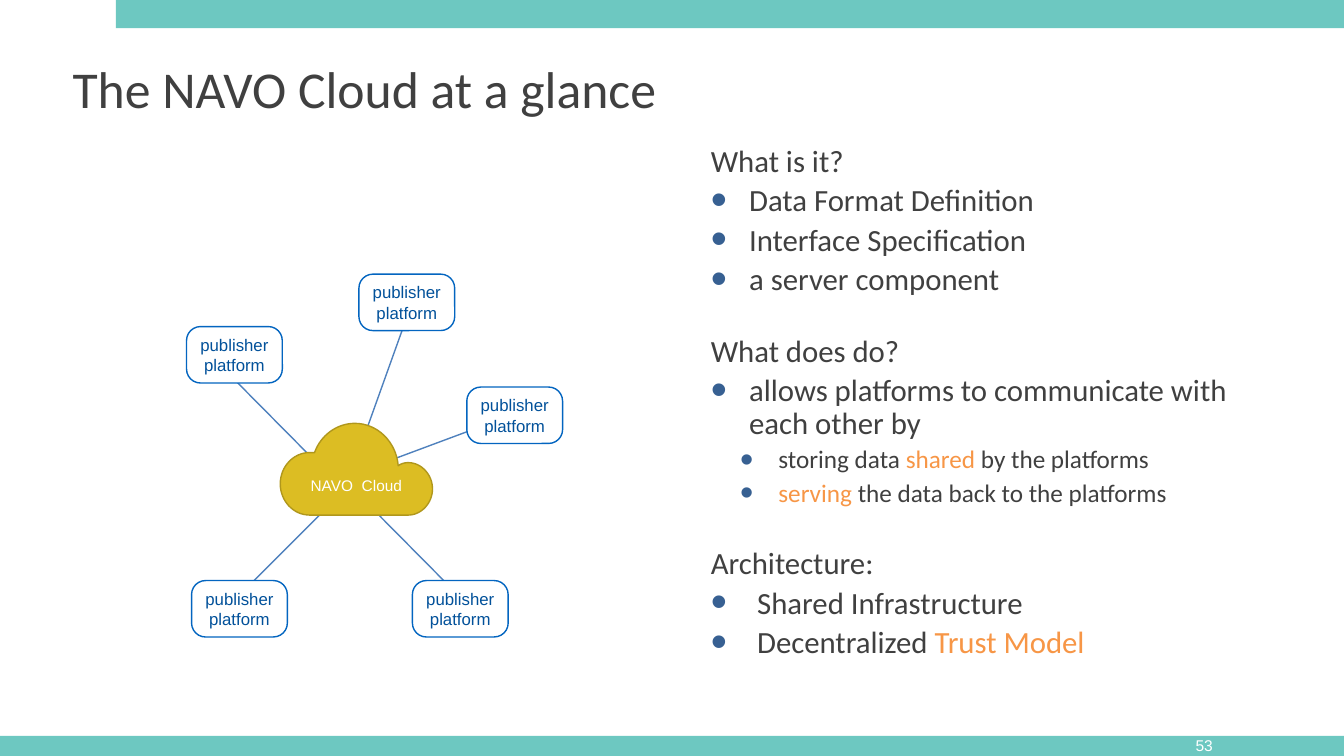
from lxml import etree
from pptx import Presentation
from pptx.dml.color import RGBColor
from pptx.enum.shapes import MSO_CONNECTOR, MSO_SHAPE
from pptx.enum.text import MSO_ANCHOR, PP_ALIGN
from pptx.oxml.ns import qn
from pptx.util import Inches, Pt

RECTANGLE = MSO_SHAPE.RECTANGLE
ROUNDED = MSO_SHAPE.ROUNDED_RECTANGLE
STRAIGHT = MSO_CONNECTOR.STRAIGHT
TOP, MIDDLE = MSO_ANCHOR.TOP, MSO_ANCHOR.MIDDLE
LEFT, CENTER, RIGHT = PP_ALIGN.LEFT, PP_ALIGN.CENTER, PP_ALIGN.RIGHT

TEAL = RGBColor(0x6D, 0xC8, 0xC1)
WHITE = RGBColor(0xFF, 0xFF, 0xFF)
DARK_GRAY = RGBColor(0x40, 0x40, 0x40)
ORANGE = RGBColor(0xF7, 0x96, 0x46)
BULLET_BLUE = RGBColor(0x37, 0x60, 0x92)
BOX_LINE = RGBColor(0x03, 0x65, 0xC0)
BOX_TEXT = RGBColor(0x02, 0x51, 0x9A)
SPOKE_BLUE = RGBColor(0x4F, 0x81, 0xBD)
GOLD = RGBColor(0xDC, 0xBD, 0x23)
DARK_GOLD = RGBColor(0xB0, 0x97, 0x1C)

SLIDE_WIDTH, SLIDE_HEIGHT = 13.33, 7.5
PLATFORM_SIZE = (0.95, 0.56)

# Positions within the diagram: platform corner, spoke start, spoke end
PLATFORMS = [
    ((1.71, 0), (1.69, 1.81), (2.17, 0.47)),
    ((2.78, 1.12), (1.61, 2.0), (2.79, 1.56)),
    ((0, 0.52), (1.42, 2.0), (0.47, 1.04)),
    ((0.05, 3.04), (1.61, 2.1), (0.66, 3.05)),
    ((2.24, 3.04), (1.68, 2.16), (2.72, 3.21)),
]

# Cloud outline within its box: a point, or two control points and an end
CLOUD_START = (0.74, 0)
CLOUD_OUTLINE = [
    [(0.56, 0), (0.4, 0.12), (0.34, 0.29)],
    [(0.32, 0.29), (0.31, 0.29), (0.29, 0.29)],
    [(0.13, 0.29), (0, 0.43), (0, 0.6)],
    [(0, 0.77), (0.13, 0.91), (0.29, 0.91)],
    [(1.27, 0.91)],
    [(1.4, 0.91), (1.51, 0.79), (1.51, 0.65)],
    [(1.51, 0.51), (1.4, 0.39), (1.27, 0.39)],
    [(1.23, 0.39), (1.2, 0.4), (1.17, 0.42)],
    [(1.15, 0.18), (0.96, 0), (0.74, 0)],
]

# Text parts, size, hanging indent, left margin, space before
FACTS = [
    (["What is it?"], 22, 0, 0, 0),
    (["Data Format Definition"], 22, 0.38, 0.38, 5),
    (["Interface Specification"], 22, 0.38, 0.38, 5),
    (["a server component"], 22, 0.38, 0.38, 5),
    (["What does do?"], 22, 0, 0, 28),
    (["allows platforms to communicate with each other by"], 22, 0.38, 0.38, 5),
    (["storing data ", "shared", " by the platforms"], 18, 0.38, 0.67, 5),
    (["serving", " the data back to the platforms"], 18, 0.38, 0.67, 5),
    (["Architecture:"], 22, 0, 0, 29),
    (["Shared Infrastructure"], 22, 0.46, 0.46, 5),
    (["Decentralized ", "Trust Model"], 22, 0.46, 0.46, 5),
]
HIGHLIGHTS = {"shared", "serving", "Trust Model"}


def style_font(font, name, size, color):
    font.name = name
    font.size = Pt(size)
    font.color.rgb = color


def set_frame(shape, inset, anchor, wrap=True):
    frame = shape.text_frame
    frame.word_wrap = wrap
    frame.vertical_anchor = anchor
    frame.margin_left = frame.margin_right = Inches(inset)
    frame.margin_top = frame.margin_bottom = Inches(inset)
    return frame


def write_line(frame, text, name, size, color, alignment):
    frame.text = text
    paragraph = frame.paragraphs[0]
    paragraph.alignment = alignment
    style_font(paragraph.runs[0].font, name, size, color)


def paint(shape, fill, line=None):
    shape.shadow.inherit = False
    shape.fill.solid()
    shape.fill.fore_color.rgb = fill
    if line is None:
        shape.line.fill.background()
    else:
        shape.line.color.rgb = line
        shape.line.width = Pt(1)


def add_box(slide, preset, left, top, width, height, fill, line=None):
    shape = slide.shapes.add_shape(
        preset, Inches(left), Inches(top), Inches(width), Inches(height))
    paint(shape, fill, line)
    return shape


def add_text_box(slide, left, top, width, height):
    return slide.shapes.add_textbox(
        Inches(left), Inches(top), Inches(width), Inches(height))


def add_bars(slide):
    add_box(slide, RECTANGLE, 0, 7.3, SLIDE_WIDTH, 0.2, TEAL)
    add_box(slide, RECTANGLE, 1.15, 0, SLIDE_WIDTH - 1.15, 0.28, TEAL)


def add_title(slide, left, top, width, height):
    frame = set_frame(add_text_box(slide, left, top, width, height), 0.05, TOP)
    write_line(frame, "The NAVO Cloud at a glance", "Calibri", 36.9, DARK_GRAY, LEFT)


def add_page_number(slide, left, top, width, height):
    box = add_text_box(slide, left, top, width, height)
    frame = set_frame(box, 0.05, MIDDLE, wrap=False)
    write_line(frame, "53", "Arial", 11.1, WHITE, RIGHT)


def add_bullet(paragraph, hanging, margin):
    properties = paragraph._p.get_or_add_pPr()
    properties.set("marL", str(Inches(margin)))
    properties.set("indent", str(-Inches(hanging)))
    color = etree.SubElement(properties, qn("a:buClr"))
    etree.SubElement(color, qn("a:srgbClr"), val=str(BULLET_BLUE))
    etree.SubElement(properties, qn("a:buSzPct"), val="150000")
    etree.SubElement(properties, qn("a:buFont"), typeface="Arial")
    etree.SubElement(properties, qn("a:buChar"), char="•")


def add_facts(slide, left, top, width, height):
    frame = set_frame(add_text_box(slide, left, top, width, height), 0.05, TOP)
    for index, (parts, size, hanging, margin, space) in enumerate(FACTS):
        paragraph = frame.add_paragraph() if index else frame.paragraphs[0]
        if hanging:
            add_bullet(paragraph, hanging, margin)
        paragraph.line_spacing = 0.88
        paragraph.space_before = Pt(space)
        for part in parts:
            run = paragraph.add_run()
            run.text = part
            color = ORANGE if part in HIGHLIGHTS else DARK_GRAY
            style_font(run.font, "Calibri", size, color)


def add_spoke(slide, left, top, start, end):
    spoke = slide.shapes.add_connector(
        STRAIGHT, Inches(left + start[0]), Inches(top + start[1]),
        Inches(left + end[0]), Inches(top + end[1]))
    spoke.line.color.rgb = SPOKE_BLUE
    spoke.line.width = Pt(1)
    etree.SubElement(spoke._element.spPr, qn("a:effectLst"))


def add_platform(slide, left, top):
    box = add_box(slide, ROUNDED, left, top, *PLATFORM_SIZE, WHITE, BOX_LINE)
    box.adjustments[0] = 0.247
    frame = set_frame(box, 0.06, MIDDLE)
    write_line(frame, "publisher platform", "Arial", 12, BOX_TEXT, CENTER)


def curve_points(start, first, second, end, steps=16):
    """Return points along a cubic curve, without its start."""
    points = []
    for step in range(1, steps + 1):
        t = step / steps
        weights = ((1 - t) ** 3, 3 * t * (1 - t) ** 2, 3 * t * t * (1 - t), t ** 3)
        controls = (start, first, second, end)
        points.append(tuple(sum(weight * control[axis] for weight, control
                                in zip(weights, controls)) for axis in (0, 1)))
    return points


def add_cloud(slide, left, top):
    points = [CLOUD_START]
    for segment in CLOUD_OUTLINE:
        points += segment if len(segment) == 1 else curve_points(points[-1], *segment)
    corners = [(Inches(left + x), Inches(top + y)) for x, y in points]
    builder = slide.shapes.build_freeform(*corners[0])
    builder.add_line_segments(corners[1:], close=True)
    cloud = builder.convert_to_shape()
    paint(cloud, GOLD, DARK_GOLD)
    frame = set_frame(cloud, 0.06, MIDDLE)
    frame.margin_top = Inches(0.38)
    write_line(frame, "NAVO  Cloud", "Arial", 11, WHITE, CENTER)


def add_diagram(slide, left, top):
    for _, start, end in PLATFORMS:
        add_spoke(slide, left, top, start, end)
    for (x, y), _, _ in PLATFORMS:
        add_platform(slide, left + x, top + y)
    add_cloud(slide, left + 0.93, top + 1.48)


def main():
    presentation = Presentation()
    presentation.slide_width = Inches(SLIDE_WIDTH)
    presentation.slide_height = Inches(SLIDE_HEIGHT)
    slide = presentation.slides.add_slide(presentation.slide_layouts[6])
    add_bars(slide)
    add_title(slide, 0.67, 0.51, 12, 1.25)
    add_page_number(slide, 11.8, 7.25, 0.28, 0.29)
    add_facts(slide, 7, 1.4, 5.71, 5.44)
    add_diagram(slide, 1.85, 2.72)
    presentation.save("out.pptx")


if __name__ == "__main__":
    main()
